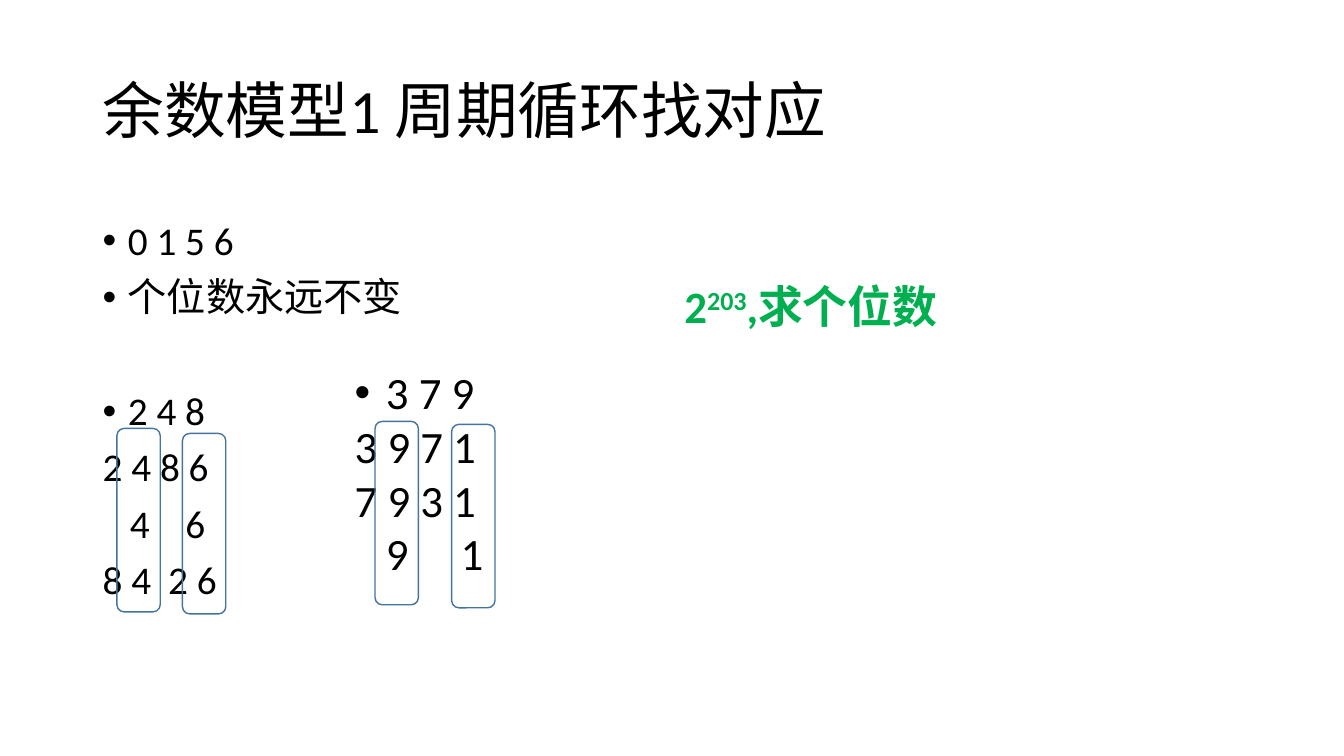
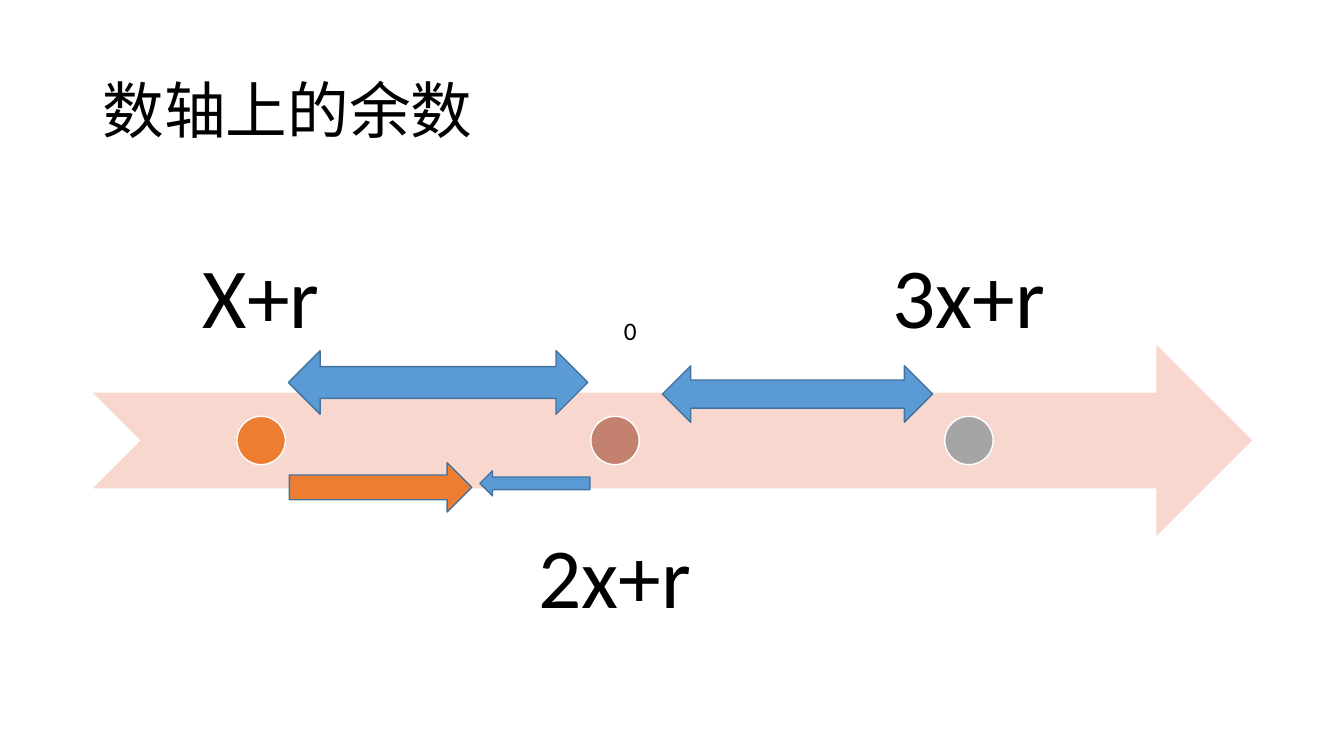
from lxml import etree
from pptx import Presentation
from pptx.dml.color import RGBColor
from pptx.enum.shapes import MSO_SHAPE
from pptx.enum.text import MSO_ANCHOR, PP_ALIGN
from pptx.oxml.ns import qn
from pptx.util import Inches, Pt

TOP, MID, LOW = MSO_ANCHOR.TOP, MSO_ANCHOR.MIDDLE, MSO_ANCHOR.BOTTOM
LEFT, CENTER = PP_ALIGN.LEFT, PP_ALIGN.CENTER
ROUND, OVAL = MSO_SHAPE.ROUNDED_RECTANGLE, MSO_SHAPE.OVAL
NOTCH, BOTH = MSO_SHAPE.NOTCHED_RIGHT_ARROW, MSO_SHAPE.LEFT_RIGHT_ARROW
BACK, AHEAD = MSO_SHAPE.LEFT_ARROW, MSO_SHAPE.RIGHT_ARROW

BLACK = RGBColor(0x00, 0x00, 0x00)
WHITE = RGBColor(0xFF, 0xFF, 0xFF)
GREEN = RGBColor(0x00, 0xB0, 0x50)
BLUE = RGBColor(0x5B, 0x9B, 0xD5)
NAVY = RGBColor(0x43, 0x73, 0x9E)
ORANGE = RGBColor(0xED, 0x7D, 0x31)
BRICK = RGBColor(0xC4, 0x81, 0x70)
GRAY = RGBColor(0xA5, 0xA5, 0xA5)
PINK = RGBColor(0xF8, 0xD7, 0xCE)

FONT = "Calibri"
WIDE, HIGH = 13.33, 7.5
EDGE, SPAN = 0.92, 11.5

CYCLE = "余数模型1 周期循环找对应"
EVEN = [
    dict(text="0 1 5 6", dot=0.25),
    dict(text="个位数永远不变", dot=0.25),
    dict(text="2 4 8", dot=0.25, before=51),
    dict(text="2 4 8 6"),
    dict(text="\t4\t6", tabs=(0.27, 0.82)),
    dict(text="8 4\t2 6", tabs=(0.65,)),
]
ODD = [
    dict(text="3 7 9", dot=0.31),
    dict(text="3 9 7 1"),
    dict(text="7 9 3 1"),
    dict(text="\t9\t1", tabs=(0.31, 1.05)),
]
TASK = [dict(text=("2", "^203", ",求个位数"))]
FRAMES = [(1.16, 4.25, 1.82), (4.48, 4.21, 1.82),
          (3.72, 4.18, 1.82), (1.81, 4.3, 1.79)]

AXIS = "数轴上的余数"
STOPS = [("X+r", ORANGE, 2, LOW), ("2x+r", BRICK, 4.85, TOP),
         ("3x+r", GRAY, 2, LOW)]
STEP, CELL, TALL, DOT = 3.51, 3.34, 1.9, 0.48
BAND = 3.42
ARROWS = [
    (BOTH, (2.86, 3.48, 2.97, 0.63), BLUE),
    (BOTH, (6.57, 3.63, 2.68, 0.56), BLUE),
    (BACK, (4.76, 4.67, 1.09, 0.25), BLUE),
    (AHEAD, (2.87, 4.59, 1.81, 0.49), ORANGE),
]


def add_text(slide, box, lines, size=18, color=BLACK, bold=False, anchor=TOP,
             align=LEFT, inset=(0.1, 0.05), space=1.0, before=0):
    frame = slide.shapes.add_textbox(*map(Inches, box)).text_frame
    frame.word_wrap = True
    frame.vertical_anchor = anchor
    frame.margin_left = frame.margin_right = Inches(inset[0])
    frame.margin_top = frame.margin_bottom = Inches(inset[1])
    if isinstance(lines, str):
        lines = [dict(text=lines)]
    for i, line in enumerate(lines):
        para = frame.add_paragraph() if i else frame.paragraphs[0]
        para.alignment = align
        para.line_spacing = space
        para.space_before = Pt(line.get("before", before))
        props = para._p.get_or_add_pPr()
        if "dot" in line:
            gap = Inches(line["dot"])
            props.set("marL", str(gap))
            props.set("indent", str(-gap))
            etree.SubElement(props, qn("a:buFont"), typeface="Arial")
            etree.SubElement(props, qn("a:buChar"), char="•")
        if "tabs" in line:
            stops = etree.SubElement(props, qn("a:tabLst"))
            for pos in line["tabs"]:
                etree.SubElement(stops, qn("a:tab"), pos=str(Inches(pos)), algn="l")
        parts = line["text"]
        for part in (parts,) if isinstance(parts, str) else parts:
            run = para.add_run()
            run.text = part.lstrip("^")
            font = run.font
            font.name, font.size, font.bold = FONT, Pt(size), bold
            font.color.rgb = color
            if part.startswith("^"):
                run._r.get_or_add_rPr().set("baseline", "30000")


def add_form(slide, kind, box, fill=None, line=None):
    form = slide.shapes.add_shape(kind, *map(Inches, box))
    form.shadow.inherit = False
    if fill is None:
        form.fill.background()
    else:
        form.fill.solid()
        form.fill.fore_color.rgb = fill
    if line is None:
        form.line.fill.background()
    else:
        form.line.color.rgb = line
        form.line.width = Pt(1)


def add_page(deck, title):
    slide = deck.slides.add_slide(deck.slide_layouts[6])
    add_text(slide, (EDGE, 0.4, SPAN, 1.45), title, size=44, anchor=MID, space=0.9)
    return slide


def draw_cycle(deck):
    slide = add_page(deck, CYCLE)
    add_text(slide, (EDGE, 2.15, 4.83, 4.76), EVEN, size=28, space=0.9, before=10)
    add_text(slide, (3.42, 3.57, 2.07, 2.26), ODD, size=32)
    for left, top, high in FRAMES:
        add_form(slide, ROUND, (left, top, 0.43, high), line=NAVY)
    add_text(slide, (6.69, 2.72, 4.18, 1.18), TASK, size=32, color=GREEN, bold=True)


def draw_axis(deck):
    slide = add_page(deck, AXIS)
    add_form(slide, NOTCH, (EDGE, BAND, SPAN, TALL), fill=PINK)
    for i, (label, fill, top, anchor) in enumerate(STOPS):
        left = EDGE + i * STEP
        add_text(slide, (left, top, CELL, TALL), label, size=61, anchor=anchor,
                 align=CENTER, inset=(0.47, 0.47), space=0.9)
        add_form(slide, OVAL, (left + (CELL - DOT) / 2, BAND + (TALL - DOT) / 2,
                               DOT, DOT), fill=fill, line=WHITE)
    for kind, box, fill in ARROWS:
        add_form(slide, kind, box, fill=fill, line=NAVY)
    add_text(slide, (6.09, 3.08, 0.44, 0.4), "0")


def main():
    deck = Presentation()
    deck.slide_width, deck.slide_height = Inches(WIDE), Inches(HIGH)
    draw_cycle(deck)
    draw_axis(deck)
    deck.save("out.pptx")


if __name__ == "__main__":
    main()
